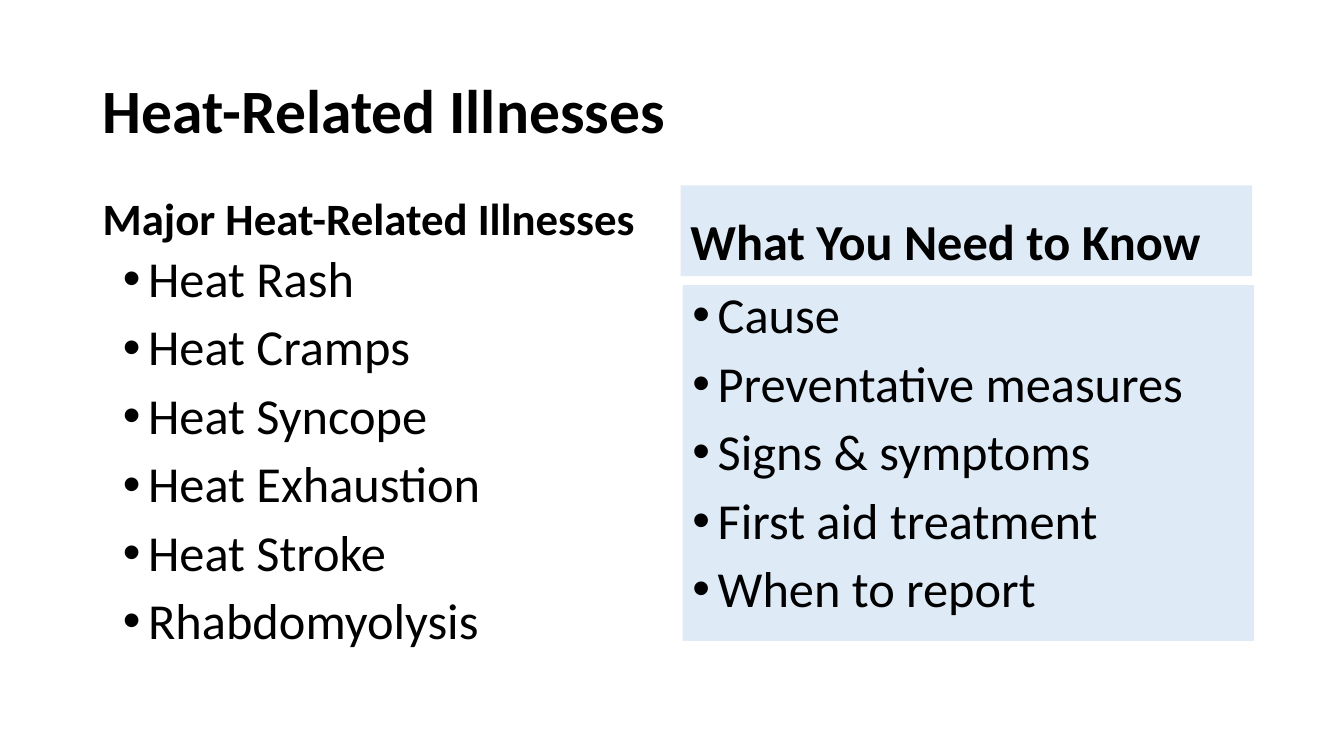
from pptx import Presentation
from pptx.util import Inches, Pt
from pptx.dml.color import RGBColor
from pptx.enum import text
from pptx.oxml import parse_xml
from pptx.oxml.ns import nsdecls

BLACK = RGBColor(0, 0, 0)
PALE = RGBColor(0xDE, 0xEB, 0xF7)
LOW, MID, TOP = text.MSO_ANCHOR.BOTTOM, text.MSO_ANCHOR.MIDDLE, text.MSO_ANCHOR.TOP

deck = Presentation()
deck.slide_width, deck.slide_height = Inches(13.33), Inches(7.5)
slide = deck.slides.add_slide(deck.slide_layouts[5])


def write(shape, box, lines, size, anchor, fill=None, bold=False, gap=10):
    shape.left, shape.top, shape.width, shape.height = map(Inches, box)
    if fill:
        shape.fill.solid()
        shape.fill.fore_color.rgb = fill
    frame = shape.text_frame
    frame.text = "\n".join(lines)
    frame.word_wrap = True
    frame.auto_size = text.MSO_AUTO_SIZE.NONE
    frame.vertical_anchor = anchor
    style = {"name": "Calibri", "size": Pt(size), "bold": bold}
    for para in frame.paragraphs:
        para.alignment = text.PP_ALIGN.LEFT
        para.line_spacing = 0.9
        para.space_before = Pt(gap)
        font = para.runs[0].font
        for key, value in style.items():
            setattr(font, key, value)
        font.color.rgb = BLACK
        if not bold:
            props = para._p.get_or_add_pPr()
            props.set("marL", str(Inches(0.25)))
            props.set("indent", str(Inches(-0.25)))
            props.append(parse_xml(f'<a:buFont {nsdecls("a")} typeface="Arial"/>'))
            props.append(parse_xml(f'<a:buChar {nsdecls("a")} char="•"/>'))


write(slide.shapes.title, (0.92, 0.4, 11.5, 1.45), ["Heat-Related Illnesses"],
      44, MID, bold=True, gap=0)

ills = ["Heat Rash", "Heat Cramps", "Heat Syncope", "Heat Exhaustion",
        "Heat Stroke", "Rhabdomyolysis"]
facts = ["Cause", "Preventative measures", "Signs & symptoms",
         "First aid treatment", "When to report"]
blocks = [
    ((0.92, 1.84, 5.64, 0.64), ["Major Heat-Related Illnesses"], 32, LOW, None, True),
    ((1.12, 2.47, 5.15, 4.29), ills, 36, TOP, None, False),
    ((6.75, 1.84, 5.67, 0.9), ["What You Need to Know"], 36, LOW, PALE, True),
    ((6.77, 2.83, 5.67, 3.53), facts, 36, TOP, PALE, False),
]
for block in blocks:
    write(slide.shapes.add_textbox(0, 0, 0, 0), *block)

deck.save("out.pptx")
